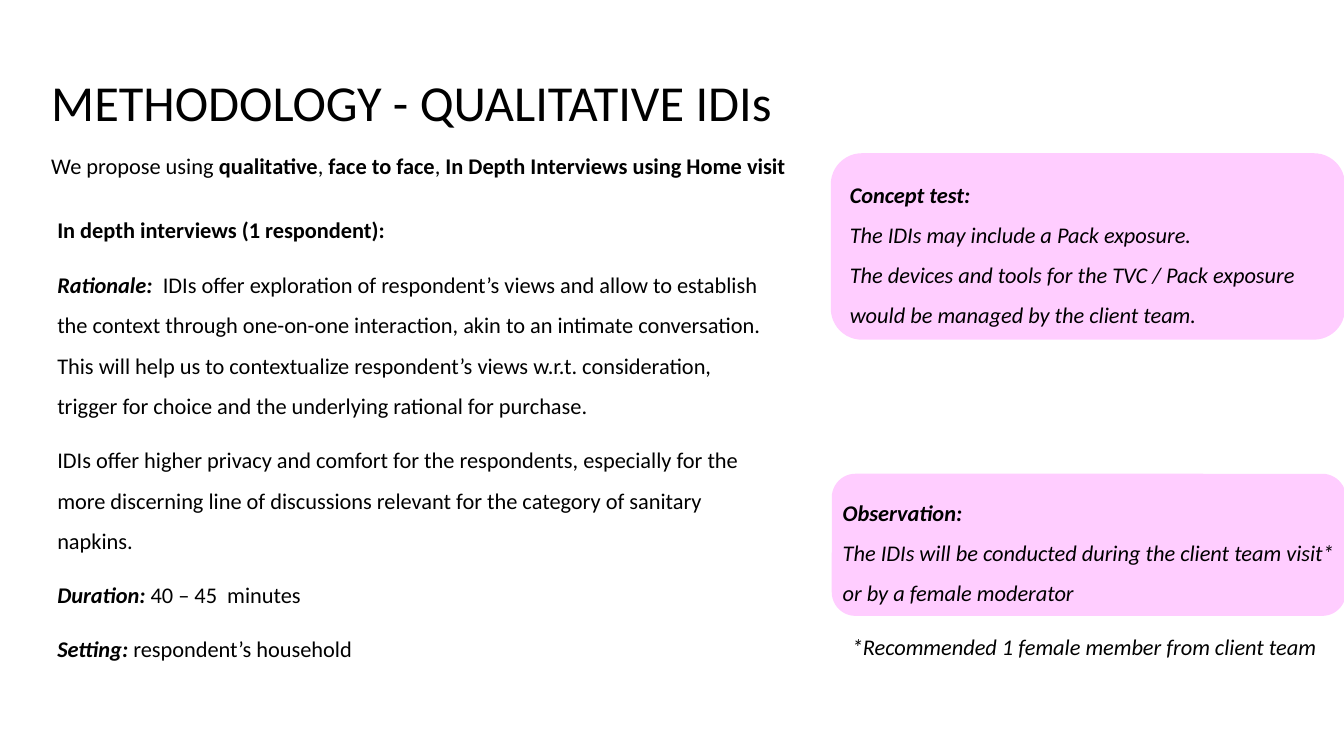
from pptx import Presentation
from pptx.dml.color import RGBColor
from pptx.enum.shapes import MSO_SHAPE as Shape
from pptx.enum.text import MSO_ANCHOR as Anchor, PP_ALIGN as Align
from pptx.util import Emu, Pt

PX = 9144  # EMU per px, 100 px to the inch
BLACK = RGBColor(0, 0, 0)
WHITE = RGBColor(255, 255, 255)
PINK = RGBColor(0xFF, 0xCD, 0xFF)

LEAD = [
    ("We propose using ", ""), ("qualitative", "b"), (", ", ""),
    ("face to face", "b"), (", ", ""),
    ("In Depth Interviews using Home visit", "b"),
]
HEAD = [("In depth interviews (1 respondent):", "b")]
BODY = [
    [("Rationale:  ", "bi"),
     ("IDIs offer exploration of respondent’s views and allow to establish "
      "the context through one-on-one interaction, akin to an intimate "
      "conversation. This will help us to contextualize respondent’s views "
      "w.r.t. consideration, trigger for choice and the underlying rational "
      "for purchase.", "")],
    [("IDIs offer higher privacy and comfort for the respondents, especially "
      "for the more discerning line of discussions relevant for the category "
      "of sanitary napkins.", "")],
    [("Duration: ", "bi"), ("40 – 45  minutes", "")],
    [("Setting: ", "bi"), ("respondent’s household", "")],
]
CONCEPT = [
    [("Concept test:", "bi")],
    [("The IDIs may include a Pack exposure.", "i")],
    [("The devices and tools for the TVC / Pack exposure would be managed "
      "by the client team.", "i")],
]
WATCH = [
    [("Observation:", "bi")],
    [("The IDIs will be conducted during the client team visit* or by a "
      "female moderator", "i")],
]
NOTE = [("*Recommended 1 female member from client team", "i")]


def add_para(frame, runs, size=16, line=1.0, before=0, align=Align.LEFT):
    """Add a paragraph of (text, style) runs; style holds b and/or i."""
    para = frame.paragraphs[0]
    if para.runs:
        para = frame.add_paragraph()
        para.space_before = Pt(before)
    para.line_spacing = line
    para.alignment = align
    font = para.font
    font.name, font.size = "Calibri", Pt(size)
    font.color.rgb = BLACK
    for text, style in runs:
        run = para.add_run()
        run.text = text
        run.font.bold = "b" in style
        run.font.italic = "i" in style


def add_box(slide, *area):
    box = slide.shapes.add_textbox(*(Emu(n * PX) for n in area))
    box.text_frame.word_wrap = True
    return box


def add_card(slide, area, paras, inset=10):
    card = slide.shapes.add_shape(
        Shape.ROUNDED_RECTANGLE, *(Emu(n * PX) for n in area))
    card.shadow.inherit = False
    card.fill.solid()
    card.fill.fore_color.rgb = PINK
    card.line.fill.background()
    frame = card.text_frame
    frame.word_wrap = True
    frame.vertical_anchor = Anchor.TOP
    frame.margin_left = frame.margin_right = Emu(inset * PX)
    for runs in paras:
        add_para(frame, runs, line=1.5)


def main():
    deck = Presentation()
    deck.slide_width, deck.slide_height = Emu(1333 * PX), Emu(750 * PX)
    slide = deck.slides.add_slide(deck.slide_layouts[6])

    title = add_box(slide, 41, 70, 1119, 69)
    title.fill.solid()
    title.fill.fore_color.rgb = WHITE
    title.text_frame.vertical_anchor = Anchor.MIDDLE
    add_para(title.text_frame, [("METHODOLOGY - QUALITATIVE IDIs", "")],
             size=36, line=0.9)

    lead = add_box(slide, 41, 146, 1259, 37)
    add_para(lead.text_frame, LEAD)

    body = add_box(slide, 47, 213, 733, 467)
    add_para(body.text_frame, HEAD, line=0.9)
    for runs in BODY:
        add_para(body.text_frame, runs, line=1.5, before=10)

    add_card(slide, (824, 152, 510, 185), CONCEPT)
    add_card(slide, (825, 470, 510, 141), WATCH, inset=4)

    note = add_box(slide, 835, 623, 493, 37)
    add_para(note.text_frame, NOTE, align=Align.JUSTIFY)

    deck.save("out.pptx")


if __name__ == "__main__":
    main()
